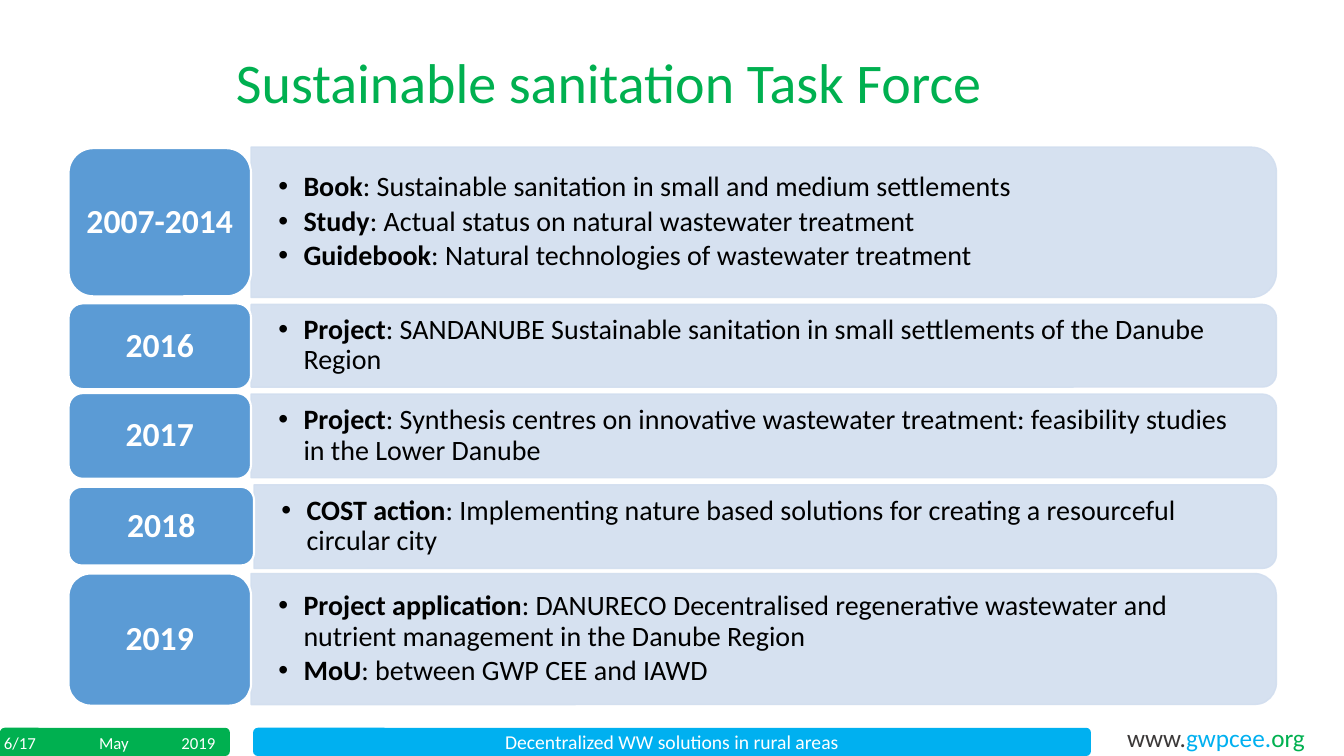
"""Build the task force timeline slide: dated tags, detail panels and a footer."""
from lxml.etree import SubElement
from pptx import Presentation
from pptx.dml.color import RGBColor
from pptx.enum.shapes import MSO_SHAPE as Shape
from pptx.enum.text import MSO_ANCHOR as Anchor, PP_ALIGN as Align
from pptx.oxml.ns import qn
from pptx.util import Inches, Pt

COLORS = {"green": "00B050", "sky": "00B0F0", "blue": "5B9BD5", "pale": "D2DEEF",
          "white": "FFFFFF", "black": "000000", "gray": "3B3838"}


def write(box, paragraphs, size=12, color="white", align=Align.LEFT, anchor=Anchor.TOP,
          spacing=None, after=0, bullet=False, margins=(0.1, 0.05)):
    """Fill a box with paragraphs, each a list of (text, bold, color or None) spans."""
    frame = box.text_frame
    frame.word_wrap = True
    frame.vertical_anchor = anchor
    frame.margin_left = frame.margin_right = Inches(margins[0])
    frame.margin_top = frame.margin_bottom = Inches(margins[1])
    for index, spans in enumerate(paragraphs):
        para = frame.add_paragraph() if index else frame.paragraphs[0]
        if bullet:
            props = para._p.get_or_add_pPr()
            props.set("marL", str(Inches(0.25)))
            props.set("indent", str(-Inches(0.25)))
            SubElement(props, qn("a:buFont")).set("typeface", "Arial")
            SubElement(props, qn("a:buChar")).set("char", "•")
        para.alignment = align
        para.line_spacing = spacing
        para.space_before, para.space_after = Pt(0), Pt(after)
        for text, bold, own_color in spans:
            span = para.add_run()
            span.text = text
            span.font.name, span.font.size, span.font.bold = "Calibri", Pt(size), bold
            span.font.color.rgb = RGBColor.from_string(COLORS[own_color or color])


def add_block(kind, left, top, width, height, fill, line=None, weight=1):
    """Add a filled preset shape without shadow."""
    block = slide.shapes.add_shape(kind, *map(Inches, (left, top, width, height)))
    block.shadow.inherit = False
    block.fill.solid()
    block.fill.fore_color.rgb = RGBColor.from_string(COLORS[fill])
    if line:
        block.line.color.rgb = RGBColor.from_string(COLORS[line])
        block.line.width = Pt(weight)
    else:
        block.line.fill.background()
    return block


deck = Presentation()
deck.slide_width, deck.slide_height = Inches(13.33), Inches(7.5)
slide = deck.slides.add_slide(deck.slide_layouts[5])

title = slide.shapes.title
title.left, title.top, title.width, title.height = map(Inches, (2.24, 0.5, 8.15, 1.23))
write(title, [[("Sustainable sanitation Task Force", False, None)]],
      size=40, color="green", spacing=0.9)

FOOTER_TOP, FOOTER_HEIGHT = 7.22, 0.28
add_block(Shape.ROUNDED_RECTANGLE, 0, FOOTER_TOP, 2.28, FOOTER_HEIGHT, "green")
add_block(Shape.RECTANGLE, 0, 7.25, 0.52, 0.25, "green")
topic = add_block(Shape.ROUNDED_RECTANGLE, 2.51, FOOTER_TOP, 8.31, FOOTER_HEIGHT, "sky")
write(topic, [[("Decentralized WW solutions in rural areas", False, None)]],
      size=14, align=Align.CENTER, anchor=Anchor.MIDDLE)

footer_texts = [
    (-0.06, FOOTER_TOP, 0.74, 12, Align.LEFT, [("6/17", False, None)]),
    (0.61, FOOTER_TOP, 1.04, 12, Align.CENTER, [("May", False, None)]),
    (1.7, FOOTER_TOP, 0.58, 12, Align.LEFT, [("2019", False, None)]),
    (11.08, 7.12, 1.99, 18, Align.LEFT,
     [("www.", False, "gray"), ("gwpcee.", False, "sky"), ("org", False, "green")]),
]
for left, top, width, size, align, spans in footer_texts:
    box = slide.shapes.add_textbox(*map(Inches, (left, top, width, 0.3)))
    write(box, [spans], size=size, align=align)

TAG_LEFT, PANEL_RIGHT = 0.68, 12.66
timeline = [
    ("2007-2014", 1.81, (1.47, 1.47), (1.46, 1.49), [
        ("Book", ": Sustainable sanitation in small and medium settlements"),
        ("Study", ": Actual status on natural wastewater treatment"),
        ("Guidebook", ": Natural technologies of wastewater treatment")]),
    ("2016", 1.81, (3.01, 0.85), (3.02, 0.82), [
        ("Project", ": SANDANUBE Sustainable sanitation in small settlements "
                    "of the Danube Region")]),
    ("2017", 1.81, (3.9, 0.85), (3.91, 0.83), [
        ("Project", ": Synthesis centres on innovative wastewater treatment: "
                    "feasibility studies in the Lower Danube")]),
    ("2018", 1.84, (4.83, 0.78), (4.81, 0.83), [
        ("COST action", ": Implementing nature based solutions for creating "
                        "a resourceful circular city")]),
    ("2019", 1.81, (5.69, 1.31), (5.69, 1.3), [
        ("Project application", ": DANURECO Decentralised regenerative wastewater "
                                "and nutrient management in the Danube Region"),
        ("MoU", ": between GWP CEE and IAWD")]),
]
for year, tag_width, (tag_top, tag_height), (top, height), items in timeline:
    left = TAG_LEFT + tag_width
    width = PANEL_RIGHT - left
    panel = add_block(Shape.ROUND_2_SAME_RECTANGLE, left + (width - height) / 2,
                      top + (height - width) / 2, height, width, "pale", "pale")
    panel.rotation = 90
    for tint in panel._element.spPr.iter(qn("a:srgbClr")):
        SubElement(tint, qn("a:alpha")).set("val", "90000")

    details = slide.shapes.add_textbox(*map(Inches, (left, top, width - 0.06, height)))
    write(details, [[(lead, True, None), (rest, False, None)] for lead, rest in items],
          size=20, color="black", anchor=Anchor.MIDDLE, spacing=0.9, after=3,
          bullet=True, margins=(0.27, 0))

    tag = add_block(Shape.ROUNDED_RECTANGLE, TAG_LEFT, tag_top, tag_width, tag_height,
                    "blue", "white", 1.5)
    write(tag, [[(year, True, None)]], size=24, align=Align.CENTER,
          anchor=Anchor.MIDDLE, spacing=0.9, margins=(0, 0))

deck.save("out.pptx")
